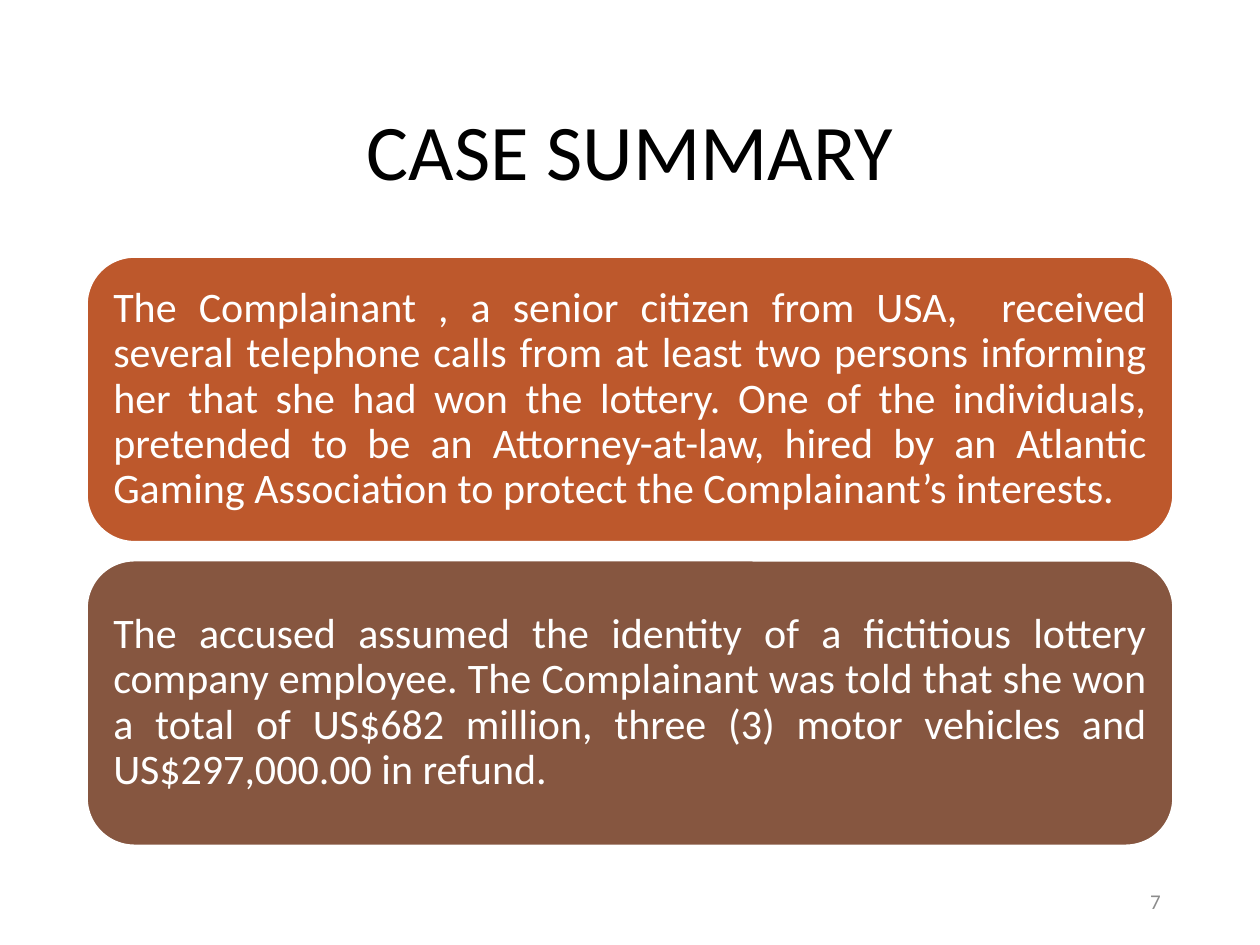
import pptx
import pptx.dml.color
import pptx.enum.shapes
import pptx.enum.text
import pptx.util

Inches = pptx.util.Inches
ALIGN = pptx.enum.text.PP_ALIGN

FONT = "Calibri"
LEFT, WIDTH = 0.69, 8.62
CARD_TOP, CARD_HEIGHT, CARD_GAP = 2.04, 2.26, 0.15

CARDS = [
    ("BD582C",
     "The Complainant , a senior citizen from USA,  received several telephone "
     "calls from at least two persons informing her that she had won the lottery. "
     "One of the individuals, pretended to be an Attorney-at-law, hired by an "
     "Atlantic Gaming Association to protect the Complainant’s interests. "),
    ("865640",
     "The accused assumed the identity of a fictitious lottery company employee. "
     "The Complainant was told that she won a total of US$682 million, three (3) "
     "motor vehicles and US$297,000.00 in refund. "),
]


def color(hex_value):
    return pptx.dml.color.RGBColor.from_string(hex_value)


def write_text(shape, text, *, size, hex_color, align, line_spacing=1.0, inset=0.1):
    frame = shape.text_frame
    frame.word_wrap = True
    frame.vertical_anchor = pptx.enum.text.MSO_ANCHOR.MIDDLE
    frame.margin_left = frame.margin_right = Inches(inset)
    frame.margin_top = frame.margin_bottom = Inches(min(inset, 0.1))
    paragraph = frame.paragraphs[0]
    paragraph.alignment = align
    paragraph.line_spacing = line_spacing
    run = paragraph.add_run()
    run.text = text
    run.font.name = FONT
    run.font.size = pptx.util.Pt(size)
    run.font.color.rgb = color(hex_color)


def add_label(slide, text, left, top, width, height, **text_format):
    label = slide.shapes.add_textbox(
        Inches(left), Inches(top), Inches(width), Inches(height))
    write_text(label, text, **text_format)


def add_card(slide, text, top, fill):
    card = slide.shapes.add_shape(
        pptx.enum.shapes.MSO_SHAPE.ROUNDED_RECTANGLE,
        Inches(LEFT), Inches(top), Inches(WIDTH), Inches(CARD_HEIGHT))
    card.shadow.inherit = False
    card.fill.solid()
    card.fill.fore_color.rgb = color(fill)
    card.line.color.rgb = color("FFFFFF")
    card.line.width = pptx.util.Pt(1)
    write_text(card, text, size=24, hex_color="FFFFFF",
               align=ALIGN.JUSTIFY, line_spacing=0.9)


def main():
    deck = pptx.Presentation()
    deck.slide_width, deck.slide_height = Inches(10), Inches(7.5)
    slide = deck.slides.add_slide(deck.slide_layouts[6])

    # Title
    add_label(slide, "CASE SUMMARY", LEFT, 0.61, WIDTH, 1.24, size=45,
              hex_color="000000", align=ALIGN.CENTER, line_spacing=0.9)

    # Slide number
    add_label(slide, "7", 7.06, 6.95, 2.25, 0.4, size=12,
              hex_color="8C8C8C", align=ALIGN.RIGHT)

    # Summary cards, stacked with an equal gap
    for index, (fill, text) in enumerate(CARDS):
        add_card(slide, text, CARD_TOP + index * (CARD_HEIGHT + CARD_GAP), fill)

    deck.save("out.pptx")


if __name__ == "__main__":
    main()
